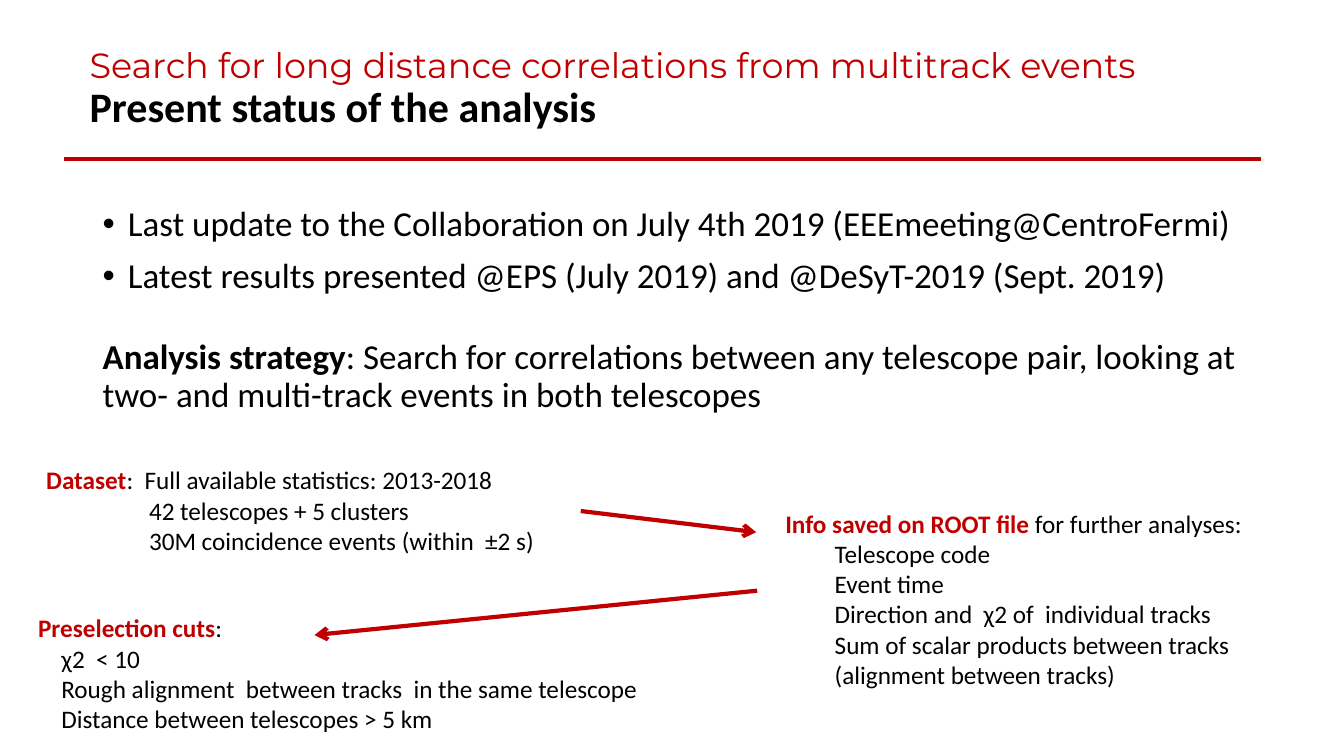
from lxml.etree import SubElement
from pptx import Presentation
from pptx.dml.color import RGBColor
from pptx.enum.shapes import MSO_CONNECTOR
from pptx.enum.text import MSO_AUTO_SIZE
from pptx.oxml.ns import qn
from pptx.util import Inches, Pt

RED = RGBColor(0xC0, 0x00, 0x00)
BLACK = RGBColor(0x00, 0x00, 0x00)


def add_box(page, left, top, width, height):
    """Add a wrapping text box and return its text frame."""
    box = page.shapes.add_textbox(Inches(left), Inches(top), Inches(width), Inches(height))
    box.text_frame.word_wrap = True
    return box.text_frame


def add_span(para, text, color=BLACK, bold=False):
    """Append a coloured run to a paragraph."""
    span = para.add_run()
    span.text = text
    span.font.color.rgb = color
    span.font.bold = bold
    return span


def set_font(para, size, name="Calibri"):
    """Set the size and typeface of a paragraph."""
    para.font.size = Pt(size)
    para.font.name = name


def set_indent(para, left, hanging=0):
    """Set the left margin and hanging indent of a paragraph."""
    properties = para._p.get_or_add_pPr()
    properties.set("marL", str(Inches(left)))
    properties.set("indent", str(-Inches(hanging)))
    return properties


def add_rule(page, start, end, arrow=False):
    """Draw a red line, with an arrowhead at its end if asked."""
    points = [Inches(length) for length in (*start, *end)]
    rule = page.shapes.add_connector(MSO_CONNECTOR.STRAIGHT, *points)
    rule.line.color.rgb = RED
    rule.line.width = Pt(3)
    if arrow:
        SubElement(rule.line._get_or_add_ln(), qn("a:tailEnd"), type="arrow")
    SubElement(rule._element.spPr, qn("a:effectLst"))


def add_title(page, left, top, width, height):
    """Place the two title lines and the rule under them."""
    frame = add_box(page, left, top, width, height)
    frame.margin_top = Inches(0.08)
    lines = (
        ("Search for long distance correlations from multitrack events", 25, "Montserrat", RED, False),
        ("Present status of the analysis", 30, "Calibri", BLACK, True),
    )
    for index, (text, size, name, color, bold) in enumerate(lines):
        para = frame.add_paragraph() if index else frame.paragraphs[0]
        para.line_spacing = 0.9
        set_font(para, size, name)
        add_span(para, text, color, bold)
    add_rule(page, (left - 0.16, top + 1.18), (left + width, top + 1.18))


def add_body(page, left, top, width, height):
    """Place the bulleted updates and the analysis strategy."""
    frame = add_box(page, left, top, width, height)
    updates = (
        "Last update to the Collaboration on July 4th 2019 (EEEmeeting@CentroFermi)",
        "Latest results presented @EPS (July 2019) and @DeSyT-2019 (Sept. 2019)",
    )
    for index, text in enumerate(updates):
        para = frame.add_paragraph() if index else frame.paragraphs[0]
        para.space_before = Pt(10)
        add_span(para, text)
        properties = set_indent(para, 0.25, 0.25)
        SubElement(properties, qn("a:buFont"), typeface="Arial")
        SubElement(properties, qn("a:buChar"), char="•")
    strategy = frame.add_paragraph()
    strategy.space_before = Pt(31)
    add_span(strategy, "Analysis strategy", bold=True)
    add_span(
        strategy,
        ": Search for correlations between any telescope pair, "
        "looking at two- and multi-track events in both telescopes",
    )
    for para in frame.paragraphs:
        para.line_spacing = 0.9
        set_font(para, 25)


def add_note(page, bounds, heading, rest, indent, items):
    """Place a note with a red heading and indented items."""
    frame = add_box(page, *bounds)
    frame.auto_size = MSO_AUTO_SIZE.SHAPE_TO_FIT_TEXT
    add_span(frame.paragraphs[0], heading, RED, True)
    add_span(frame.paragraphs[0], rest)
    for item in items:
        para = frame.add_paragraph()
        set_indent(para, indent)
        add_span(para, item)
    for para in frame.paragraphs:
        set_font(para, 18)


def add_workflow(page):
    """Place the three notes of the analysis and the arrows between them."""
    add_note(
        page, (0.28, 6.03, 6.67, 1.31), "Preselection cuts", ":", 0.23,
        (
            "χ2  < 10",
            "Rough alignment  between tracks  in the same telescope",
            "Distance between telescopes > 5 km",
        ),
    )
    add_note(
        page, (7.69, 4.99, 5.62, 1.92), "Info saved on ROOT file ", "for further analyses:", 0.49,
        (
            "Telescope code",
            "Event time",
            "Direction and  χ2 of  individual tracks",
            "Sum of scalar products between tracks (alignment between tracks)",
        ),
    )
    add_note(
        page, (0.36, 4.56, 6.67, 1.01), "Dataset", ":  Full available statistics: 2013-2018", 1.02,
        ("42 telescopes + 5 clusters", "30M coincidence events (within  ±2 s)"),
    )
    add_rule(page, (5.76, 5.07), (7.5, 5.28), arrow=True)
    add_rule(page, (7.51, 5.86), (3.12, 6.3), arrow=True)


def main():
    """Build the slide and save the deck."""
    deck = Presentation()
    deck.slide_width = Inches(13.33)
    deck.slide_height = Inches(7.5)
    page = deck.slides.add_slide(deck.slide_layouts[6])
    add_title(page, 0.79, 0.4, 11.72, 1.45)
    add_body(page, 0.92, 2, 12.06, 4.76)
    add_workflow(page)
    deck.save("out.pptx")


if __name__ == "__main__":
    main()
